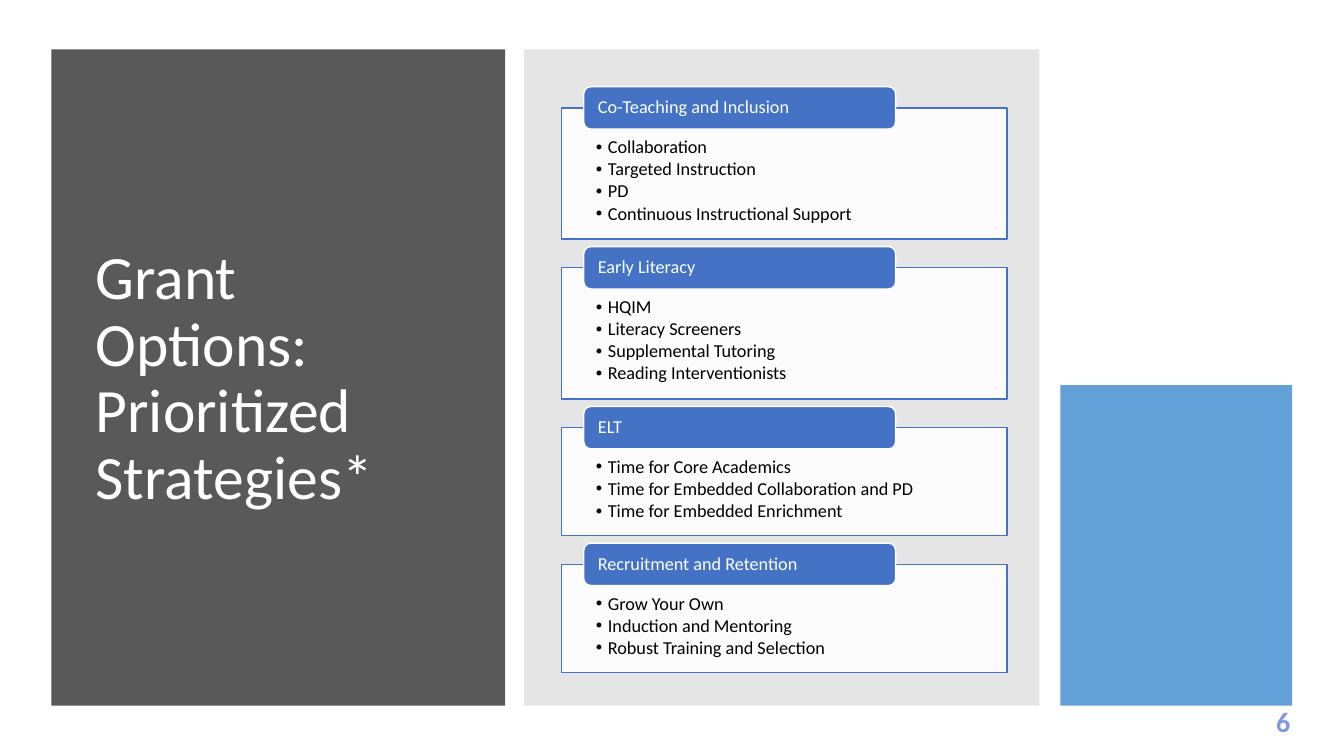
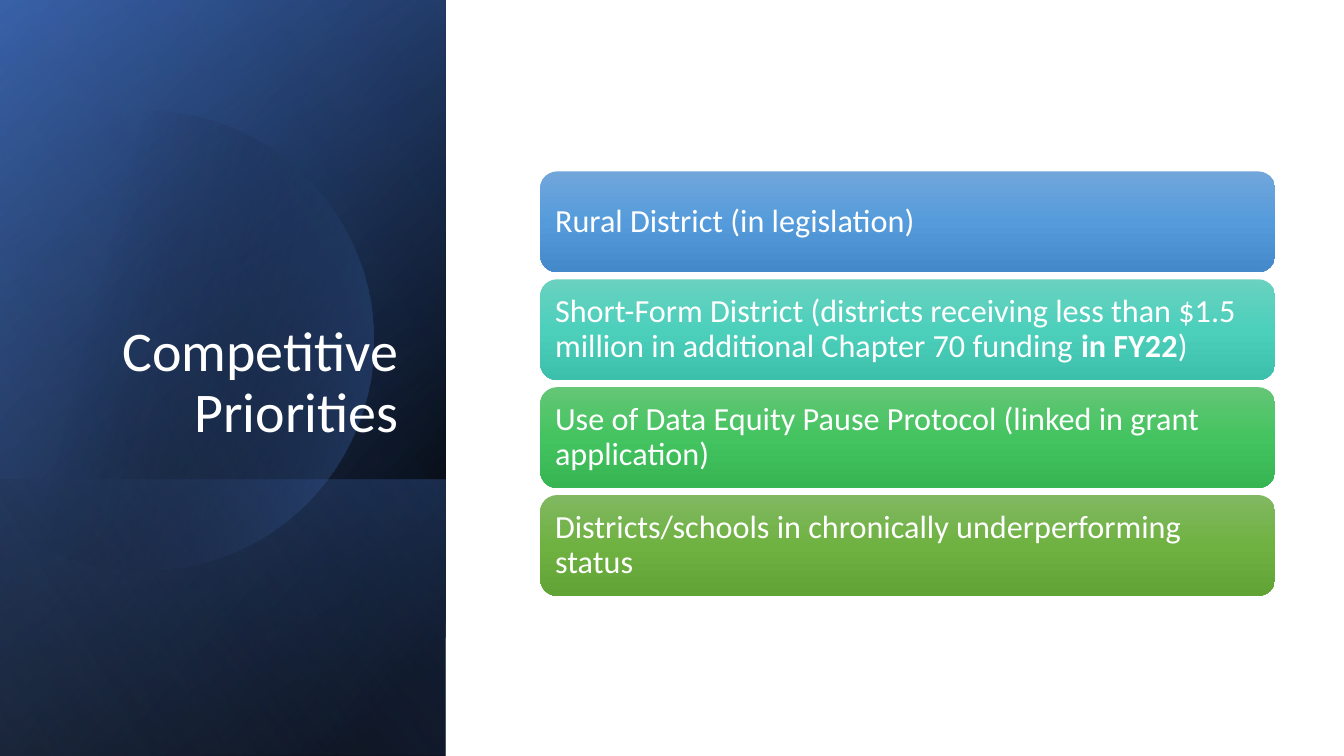
from dataclasses import dataclass, field
from math import acos, cos, pi, sin
from typing import NamedTuple

from lxml.etree import SubElement
from pptx import Presentation
from pptx.dml.color import RGBColor
from pptx.enum.shapes import MSO_SHAPE
from pptx.enum.text import MSO_ANCHOR, PP_ALIGN
from pptx.oxml.ns import qn
from pptx.util import Inches, Pt

W, H = Inches(13.333), Inches(7.5)
FONT = "Calibri"
LINE_SPACING = 0.9

WHITE = RGBColor(0xFF, 0xFF, 0xFF)
BLACK = RGBColor(0x00, 0x00, 0x00)
CHARCOAL = RGBColor(0x59, 0x59, 0x59)
GREY = RGBColor(0x80, 0x80, 0x80)
SKY = RGBColor(0x5B, 0x9B, 0xD5)
BLUE = RGBColor(0x44, 0x72, 0xC4)
NAVY = RGBColor(0x2F, 0x55, 0x97)
PALE_BLUE = RGBColor(0x8F, 0xAA, 0xDC)
PERIWINKLE = RGBColor(0x83, 0x97, 0xE7)


class Box(NamedTuple):
    """Place and size in percent of the slide's width and height."""
    x: float
    y: float
    w: float
    h: float

    def emu(self) -> tuple[int, int, int, int]:
        return (int(W * self.x / 100), int(H * self.y / 100),
                int(W * self.w / 100), int(H * self.h / 100))


class Stop(NamedTuple):
    pos: int
    color: RGBColor
    alpha: int = 100


@dataclass
class TextStyle:
    size: float
    color: RGBColor = WHITE
    bold: bool = False
    align: PP_ALIGN = PP_ALIGN.LEFT
    anchor: MSO_ANCHOR = MSO_ANCHOR.MIDDLE
    insets: tuple[float, float, float, float] = (0.1, 0.05, 0.1, 0.05)
    bullet_indent: float = 0
    space_after: float = 0


class Span(NamedTuple):
    text: str
    bold: bool = False


@dataclass
class Strategy:
    name: str
    points: list[str]


@dataclass
class Priority:
    spans: list[Span]
    shades: tuple[RGBColor, RGBColor, RGBColor]


@dataclass
class Wash:
    """Gradient layer over part of the left band."""
    box: Box
    angle: int
    stops: list[Stop] = field(default_factory=list)


PANEL_TOP, PANEL_H = 6.53, 86.8
BAND = Box(0, 0, 33.15, 100)
FOOT_TOP = 63.47

PAGE_NUMBER = TextStyle(20, PERIWINKLE, bold=True, align=PP_ALIGN.CENTER,
                        anchor=MSO_ANCHOR.TOP)
TAB_TEXT = TextStyle(13, insets=(0.12, 0, 0.12, 0))
POINT_TEXT = TextStyle(13, BLACK, anchor=MSO_ANCHOR.TOP,
                       insets=(0.34, 0.3, 0.34, 0.1),
                       bullet_indent=0.12, space_after=1.7)
BAR_TEXT = TextStyle(23, insets=(0.1, 0.1, 0.1, 0.1))

STRATEGIES = [
    Strategy("Co-Teaching and Inclusion",
             ["Collaboration", "Targeted Instruction", "PD",
              "Continuous Instructional Support"]),
    Strategy("Early Literacy",
             ["HQIM", "Literacy Screeners", "Supplemental Tutoring",
              "Reading Interventionists"]),
    Strategy("ELT",
             ["Time for Core Academics",
              "Time for Embedded Collaboration and PD",
              "Time for Embedded Enrichment"]),
    Strategy("Recruitment and Retention",
             ["Grow Your Own", "Induction and Mentoring",
              "Robust Training and Selection"]),
]

PRIORITIES = [
    Priority([Span("Rural District (in legislation)")],
             (RGBColor(0x71, 0xA6, 0xDB), RGBColor(0x55, 0x9B, 0xDB),
              RGBColor(0x44, 0x8A, 0xCA))),
    Priority([Span("Short-Form District (districts receiving less than $1.5 "
                   "million in additional Chapter 70 funding "),
              Span("in FY22", True), Span(")")],
             (RGBColor(0x6A, 0xD1, 0xC0), RGBColor(0x4C, 0xD0, 0xBC),
              RGBColor(0x3C, 0xC0, 0xAC))),
    Priority([Span("Use of Data Equity Pause Protocol (linked in grant "
                   "application)")],
             (RGBColor(0x64, 0xC6, 0x77), RGBColor(0x44, 0xC4, 0x60),
              RGBColor(0x36, 0xB5, 0x52))),
    Priority([Span("Districts/schools in chronically underperforming status")],
             (RGBColor(0x81, 0xB8, 0x61), RGBColor(0x6F, 0xB2, 0x42),
              RGBColor(0x62, 0xA3, 0x36))),
]

BACK_WASHES = [
    Wash(BAND, 50, [Stop(8, BLACK), Stop(100, NAVY)]),
    Wash(BAND, 30, [Stop(0, BLACK, 0), Stop(99, BLUE, 46)]),
    Wash(Box(0, FOOT_TOP, BAND.w, 100 - FOOT_TOP), 130,
         [Stop(2, BLUE, 29), Stop(100, BLACK, 30)]),
]
FRONT_WASH = Wash(BAND, 120, [Stop(0, BLACK, 0), Stop(99, PALE_BLUE, 11)])


def set_attributes(target, values: dict) -> None:
    for name, value in values.items():
        setattr(target, name, value)


def add_alpha(color_el, percent: int) -> None:
    if percent < 100:
        SubElement(color_el, qn("a:alpha"), val=str(percent * 1000))


def fill_solid(sp, color: RGBColor, alpha: int = 100) -> None:
    sp.fill.solid()
    sp.fill.fore_color.rgb = color
    add_alpha(sp._element.spPr.find(qn("a:solidFill"))[0], alpha)


def fill_gradient(sp, stops: list[Stop], angle: int) -> None:
    """Fill with a linear gradient; the angle runs clockwise in degrees."""
    sp.fill.gradient()
    grad = sp._element.spPr.find(qn("a:gradFill"))
    for child in list(grad):
        grad.remove(child)
    grad.set("rotWithShape", "1")
    gs_list = SubElement(grad, qn("a:gsLst"))
    for stop in stops:
        gs = SubElement(gs_list, qn("a:gs"), pos=str(stop.pos * 1000))
        add_alpha(SubElement(gs, qn("a:srgbClr"), val=str(stop.color)),
                  stop.alpha)
    SubElement(grad, qn("a:lin"), ang=str(angle * 60000), scaled="0")


def add_box(slide, box: Box, kind: MSO_SHAPE = MSO_SHAPE.RECTANGLE,
            line: RGBColor | None = None):
    sp = slide.shapes.add_shape(kind, *box.emu())
    sp.shadow.inherit = False
    if line is None:
        sp.line.fill.background()
    else:
        sp.line.color.rgb = line
        sp.line.width = Pt(1)
    return sp


def add_bullet(p, indent: float) -> None:
    pPr = p._p.get_or_add_pPr()
    pPr.set("marL", str(Inches(indent)))
    pPr.set("indent", str(-Inches(indent)))
    SubElement(pPr, qn("a:buFont"), typeface="Arial")
    SubElement(pPr, qn("a:buChar"), char="•")


def write_text(sp, paragraphs: list[list[Span]], style: TextStyle) -> None:
    tf = sp.text_frame
    left, top, right, bottom = (Inches(v) for v in style.insets)
    set_attributes(tf, {
        "word_wrap": True, "vertical_anchor": style.anchor,
        "margin_left": left, "margin_top": top,
        "margin_right": right, "margin_bottom": bottom})
    for i, spans in enumerate(paragraphs):
        p = tf.paragraphs[0] if i == 0 else tf.add_paragraph()
        set_attributes(p, {"alignment": style.align,
                           "line_spacing": LINE_SPACING,
                           "space_after": Pt(style.space_after)})
        if style.bullet_indent:
            add_bullet(p, style.bullet_indent)
        for span in spans:
            r = p.add_run()
            r.text = span.text
            set_attributes(r.font, {"name": FONT, "size": Pt(style.size),
                                    "bold": style.bold or span.bold})
            r.font.color.rgb = style.color


def add_text(slide, box: Box, text: str, style: TextStyle) -> None:
    write_text(slide.shapes.add_textbox(*box.emu()), [[Span(text)]], style)


def add_strategy(slide, strategy: Strategy, card: Box) -> None:
    """Draw a bulleted card with its name on a tab across the top edge."""
    sp = add_box(slide, card, line=BLUE)
    fill_solid(sp, WHITE, 90)
    write_text(sp, [[Span(point)] for point in strategy.points], POINT_TEXT)
    tab_h = 5.6
    tab = Box(card.x + 0.05 * card.w, card.y - tab_h / 2, 0.7 * card.w, tab_h)
    sp = add_box(slide, tab, MSO_SHAPE.ROUNDED_RECTANGLE, WHITE)
    fill_solid(sp, BLUE)
    write_text(sp, [[Span(strategy.name)]], TAB_TEXT)


def add_wash(slide, wash: Wash) -> None:
    """Draw a mirrored rectangle on its side, so that it covers wash.box."""
    x, y, w, h = wash.box.emu()
    sp = add_box(slide, wash.box)
    set_attributes(sp, {"left": x + (w - h) // 2, "top": y + (h - w) // 2,
                        "width": h, "height": w, "rotation": 90})
    sp._element.spPr.xfrm.set("flipH", "1")
    fill_gradient(sp, wash.stops, wash.angle)


def add_cut_disc(slide) -> None:
    """Draw the disc whose left part is cut off by the slide's edge."""
    cx, cy, radius = 0.107 * W, 0.45 * H, 0.171 * W
    limit = acos(-cx / radius)
    steps = 120
    angles = [limit * (2 * i / steps - 1) for i in range(steps + 1)]
    points = [(int(cx + radius * cos(a)), int(cy + radius * sin(a)))
              for a in angles]
    builder = slide.shapes.build_freeform(*points[0], scale=1.0)
    builder.add_line_segments(points[1:], close=True)
    sp = builder.convert_to_shape()
    sp.shadow.inherit = False
    sp.line.fill.background()
    fill_gradient(sp, [Stop(29, BLACK, 0), Stop(100, BLUE, 43)], 14)


def build_strategies(slide) -> None:
    add_text(slide, Box(93.15, 93.07, 4.65, 5.87), "6", PAGE_NUMBER)
    fill_solid(add_box(slide, Box(3.83, PANEL_TOP, 33.75, PANEL_H)), CHARCOAL)
    add_text(slide, Box(6.38, 11.07, 28.8, 78.27),
             "Grant Options: Prioritized Strategies*", TextStyle(44))
    fill_solid(add_box(slide, Box(39, PANEL_TOP, 38.33, PANEL_H)), GREY, 20)
    fill_solid(add_box(slide, Box(78.9, 50.93, 17.25, 42.4)), SKY, 95)
    y, gap = 14.27, 3.8
    for strategy in STRATEGIES:
        h = 5.07 + 3.07 * len(strategy.points)
        add_strategy(slide, strategy, Box(41.78, y, 33.15, h))
        y += h + gap


def build_priorities(slide) -> None:
    for wash in BACK_WASHES:
        add_wash(slide, wash)
    add_cut_disc(slide)
    add_wash(slide, FRONT_WASH)
    add_text(slide, Box(4.8, 24.53, 25.58, 34.93), "Competitive Priorities",
             TextStyle(40, align=PP_ALIGN.RIGHT, anchor=MSO_ANCHOR.BOTTOM))
    pitch = 14.27
    for row, priority in enumerate(PRIORITIES):
        sp = add_box(slide, Box(40.2, 22.67 + row * pitch, 54.68, 13.33),
                     MSO_SHAPE.ROUNDED_RECTANGLE)
        stops = [Stop(50 * i, c) for i, c in enumerate(priority.shades)]
        fill_gradient(sp, stops, 90)
        write_text(sp, [priority.spans], BAR_TEXT)


def main() -> None:
    prs = Presentation()
    set_attributes(prs, {"slide_width": W, "slide_height": H})
    for build in (build_strategies, build_priorities):
        build(prs.slides.add_slide(prs.slide_layouts[6]))
    prs.save("out.pptx")


if __name__ == "__main__":
    main()
